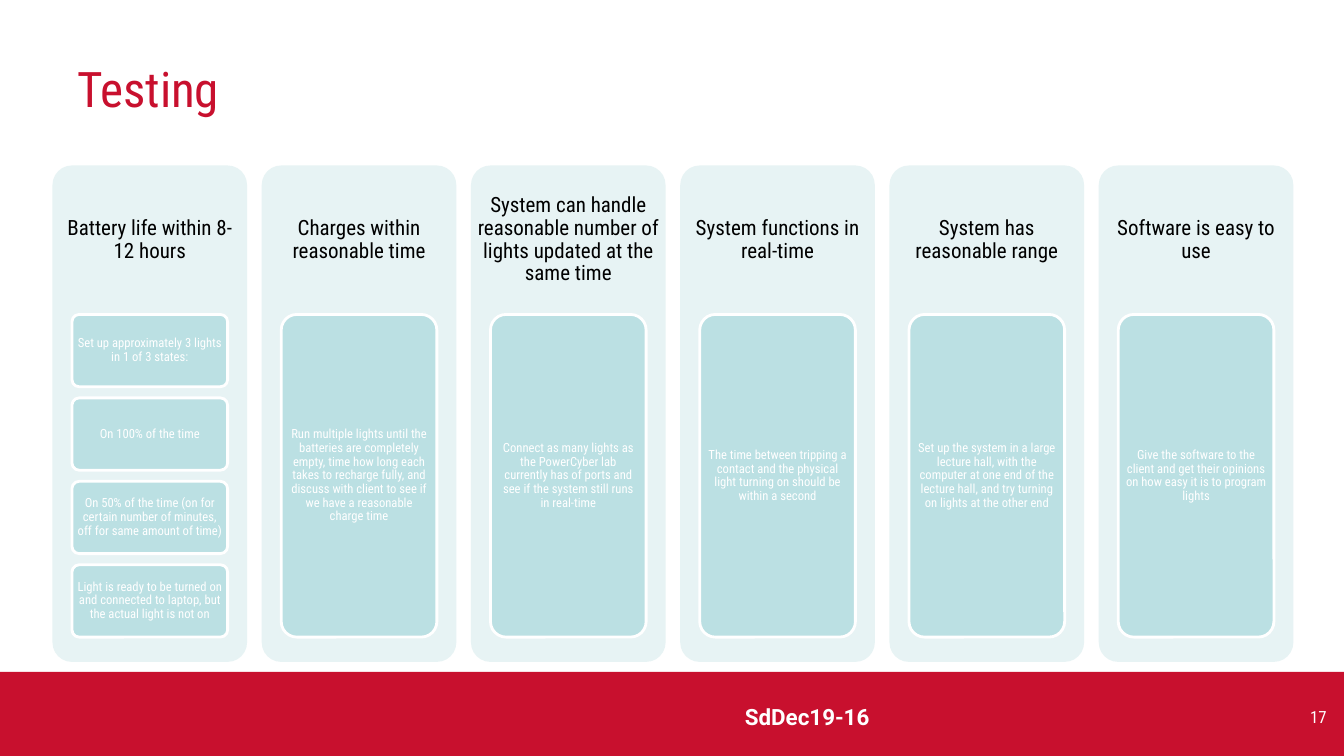
from pptx import Presentation
from pptx.dml.color import RGBColor
from pptx.enum.shapes import MSO_SHAPE
from pptx.enum.text import MSO_ANCHOR, PP_ALIGN
from pptx.util import Pt

RECT, ROUND = MSO_SHAPE.RECTANGLE, MSO_SHAPE.ROUNDED_RECTANGLE
MIDDLE = MSO_ANCHOR.MIDDLE
LEFT, CENTER, RIGHT = PP_ALIGN.LEFT, PP_ALIGN.CENTER, PP_ALIGN.RIGHT

TITLE, TEAM, PAGE = "Testing", "SdDec19-16", "17"
TESTS = [
    ("Battery life within 8-12 hours", [
        "Set up approximately 3 lights in 1 of 3 states:",
        "On 100% of the time",
        "On 50% of the time (on for certain number of minutes, "
        "off for same amount of time)",
        "Light is ready to be turned on and connected to laptop, "
        "but the actual light is not on"]),
    ("Charges within reasonable time", [
        "Run multiple lights until the batteries are completely empty, "
        "time how long each takes to recharge fully, and discuss with "
        "client to see if we have a reasonable charge time"]),
    ("System can handle reasonable number of lights updated at the same time", [
        "Connect as many lights as the PowerCyber lab currently has of "
        "ports and see if the system still runs in real-time"]),
    ("System functions in real-time", [
        "The time between tripping a contact and the physical light "
        "turning on should be within a second"]),
    ("System has reasonable range", [
        "Set up the system in a large lecture hall, with the computer at "
        "one end of the lecture hall, and try turning on lights at the "
        "other end"]),
    ("Software is easy to use", [
        "Give the software to the client and get their opinions on how "
        "easy it is to program lights"]),
]

COLORS = {"red": "C8102E", "pale": "E7F3F4", "teal": "BBE0E3",
          "white": "FFFFFF", "black": "000000"}
FONT, BOLD_FONT = "Roboto Condensed", "Roboto"

WIDE, HIGH, BAR = 960, 540, 60
COL_X, COL_Y, COL_W, COL_H, PITCH = 37.5, 118.2, 139, 354.6, 149.47
HEAD_H = COL_H * 0.3
CARD_W, STACK_H = COL_W * 0.8, COL_H * 0.65
GAP_RATE = 2 / 13  # gap between stacked cards, as a share of card height


def color(name):
    return RGBColor.from_string(COLORS[name])


def add_panel(slide, kind, box, fill, line=None):
    panel = slide.shapes.add_shape(kind, *map(Pt, box))
    panel.shadow.inherit = False
    panel.fill.solid()
    panel.fill.fore_color.rgb = color(fill)
    if line:
        panel.line.color.rgb = color(line)
        panel.line.width = Pt(2)
    else:
        panel.line.fill.background()
    if kind == ROUND:
        panel.adjustments[0] = 0.1
    return panel


def set_text(shape, text, size, ink, align=CENTER, pad=(7.2, 3.6),
             space=1, font=FONT, bold=False):
    frame = shape.text_frame
    frame.word_wrap = True
    frame.vertical_anchor = MIDDLE
    frame.margin_left = frame.margin_right = Pt(pad[0])
    frame.margin_top = frame.margin_bottom = Pt(pad[1])
    para = frame.paragraphs[0]
    para.text = text
    para.alignment = align
    para.line_spacing = space
    para.font.name = font
    para.font.size = Pt(size)
    para.font.bold = bold
    para.font.color.rgb = color(ink)


def add_label(slide, box, *args, **style):
    set_text(slide.shapes.add_textbox(*map(Pt, box)), *args, **style)


def add_test(slide, left, head, steps):
    add_panel(slide, ROUND, (left, COL_Y, COL_W, COL_H), "pale")
    add_label(slide, (left, COL_Y, COL_W, HEAD_H), head, 15, "black",
              pad=(4.2, 4.2), space=0.9)
    count = len(steps)
    high = STACK_H / (count + (count - 1) * GAP_RATE)
    for row, step in enumerate(steps):
        top = COL_Y + HEAD_H + row * high * (1 + GAP_RATE)
        box = (left + (COL_W - CARD_W) / 2, top, CARD_W, high)
        card = add_panel(slide, ROUND, box, "teal", "white")
        set_text(card, step, 9, "white", pad=(2, 1.5), space=0.9)


def main():
    deck = Presentation()
    deck.slide_width, deck.slide_height = Pt(WIDE), Pt(HIGH)
    slide = deck.slides.add_slide(deck.slide_layouts[6])
    add_panel(slide, RECT, (0, HIGH - BAR, WIDE, BAR), "red")
    add_label(slide, (48, 12, 816, 102), TITLE, 35, "red", align=LEFT)
    add_label(slide, (422.8, 497.8, 307.6, 28.8), TEAM, 16, "white",
              font=BOLD_FONT, bold=True)
    add_label(slide, (730.8, 497.8, 224, 28.8), PAGE, 12, "white", align=RIGHT)
    for col, (head, steps) in enumerate(TESTS):
        add_test(slide, COL_X + col * PITCH, head, steps)
    deck.save("out.pptx")


if __name__ == "__main__":
    main()
